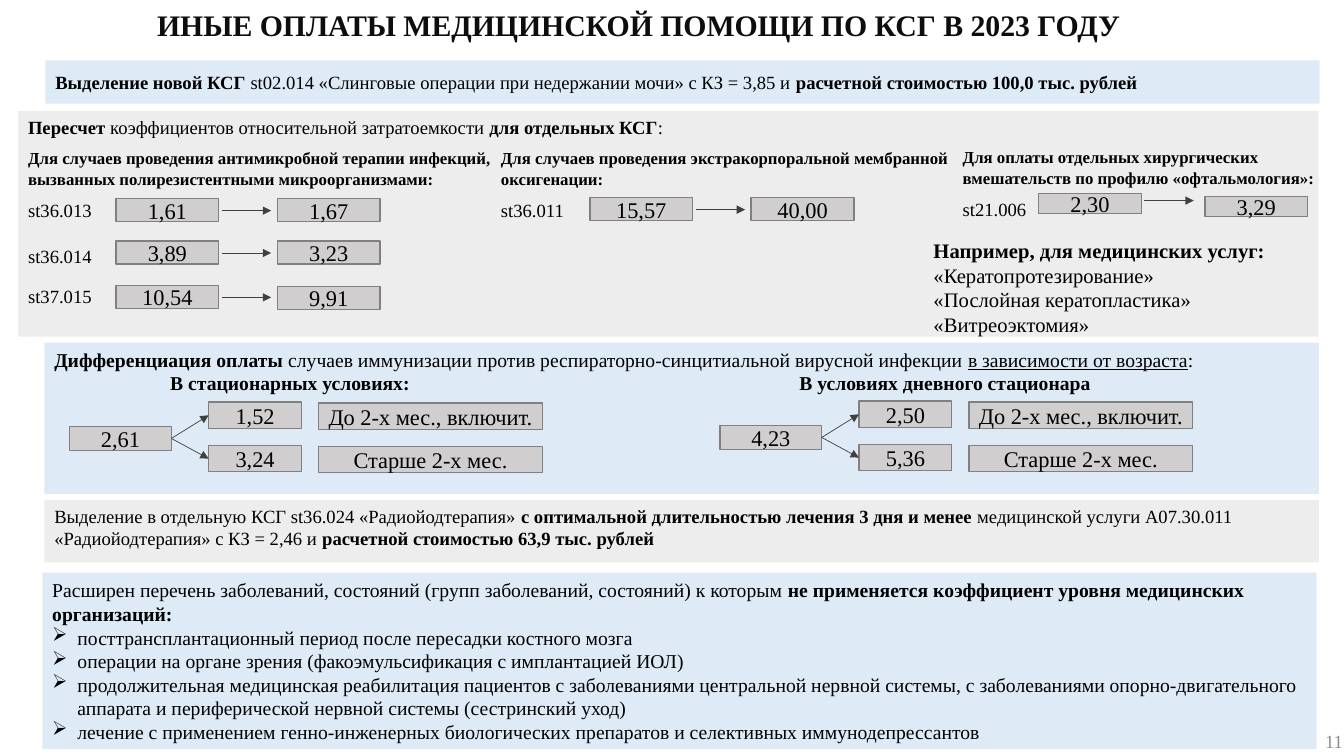
from lxml.etree import SubElement
from pptx import Presentation
from pptx.dml.color import RGBColor
from pptx.enum.shapes import MSO_CONNECTOR, MSO_SHAPE
from pptx.enum.text import MSO_ANCHOR, MSO_AUTO_SIZE, PP_ALIGN
from pptx.oxml.ns import qn
from pptx.util import Inches, Pt

FONT = "Times New Roman"
COLORS = {
    "blue": "DEEBF7", "gray": "EDEDED", "chip": "D0CECE", "edge": "808080",
    "arrow": "404040", "text": "000000", "title": "0D0D0D", "number": "8C8C8C",
}


def color(name):
    return RGBColor.from_string(COLORS[name])


def inches(*lengths):
    return [Inches(length) for length in lengths]


def add_bullet(para):
    properties = para._p.get_or_add_pPr()
    properties.set("marL", str(Inches(0.25)))
    properties.set("indent", str(-Inches(0.25)))
    SubElement(properties, qn("a:buChar")).set("char", "➢")


def add_tabs(para, stops):
    tabs = SubElement(para._p.get_or_add_pPr(), qn("a:tabLst"))
    for stop in stops:
        tab = SubElement(tabs, qn("a:tab"))
        tab.set("pos", str(Inches(stop)))
        tab.set("algn", "l")


def write(frame, spans, size, first=False, align=PP_ALIGN.LEFT, ink="text",
          before=0, bullet=False, tabs=()):
    para = frame.paragraphs[0] if first else frame.add_paragraph()
    para.alignment = align
    para.space_before = Pt(before)
    if bullet:
        add_bullet(para)
    if tabs:
        add_tabs(para, tabs)
    para.font.name = FONT
    para.font.size = Pt(size)
    para.font.color.rgb = color(ink)
    for text, style in spans:
        span = para.add_run()
        span.text = text
        span.font.bold = style == "bold"
        if style == "underline":
            span.font.underline = True


def add_rect(page, place, fill, anchor=MSO_ANCHOR.MIDDLE):
    box = page.shapes.add_shape(MSO_SHAPE.RECTANGLE, *inches(*place))
    box.shadow.inherit = False
    box.fill.solid()
    box.fill.fore_color.rgb = color(fill)
    box.line.fill.background()
    box.text_frame.word_wrap = True
    box.text_frame.vertical_anchor = anchor
    return box


def add_panel(page, place, fill, spans, size, anchor=MSO_ANCHOR.TOP):
    frame = add_rect(page, place, fill, anchor).text_frame
    write(frame, spans, size, first=True)
    return frame


def add_chip(page, left, top, width, height, text, inset=0.1):
    box = add_rect(page, (left, top, width, height), "chip")
    box.line.color.rgb = color("edge")
    box.line.width = Pt(1)
    box.text_frame.margin_left = box.text_frame.margin_right = Inches(inset)
    write(box.text_frame, [(text, "")], 16, first=True, align=PP_ALIGN.CENTER)
    return box


def add_text(page, place):
    frame = page.shapes.add_textbox(*inches(*place)).text_frame
    frame.word_wrap = True
    return frame


def add_arrow(page, start_x, start_y, end_x, end_y):
    arrow = page.shapes.add_connector(
        MSO_CONNECTOR.STRAIGHT, *inches(start_x, start_y, end_x, end_y))
    arrow.line.color.rgb = color("arrow")
    arrow.line.width = Pt(0.5)
    SubElement(arrow.line._get_or_add_ln(), qn("a:tailEnd")).set("type", "triangle")
    SubElement(arrow._element.spPr, qn("a:effectLst"))
    return arrow


def add_codes(page, place, heading, codes):
    frame = add_text(page, place)
    write(frame, [(heading, "bold")], 12, first=True)
    for code, gap in codes:
        write(frame, [(code, "")], 13.3, before=gap)


def add_change(page, left, top, old, new, height=0.23, step=1.6, drop=0,
               arrow_drop=0.12):
    add_chip(page, left, top, 1.02, height, old)
    add_chip(page, left + step, top + drop, 1.02, height, new)
    add_arrow(page, left + 1.05, top + arrow_drop, left + 1.54, top + arrow_drop)


def add_fork(page, left, top, source, branches):
    root = add_chip(page, left, top + 0.24, 1.01, 0.24, source)
    for row, (value, age, inset) in enumerate(branches):
        level = top + 0.43 * row
        branch = add_chip(page, left + 1.38, level, 0.92, 0.26, value)
        add_chip(page, left + 2.47, level + 0.01, 2.22, 0.26, age, inset)
        arrow = add_arrow(page, left + 1.01, top + 0.36, left + 1.38, level + 0.13)
        arrow.begin_connect(root, 3)
        arrow.end_connect(branch, 1)


def add_title(page, text):
    title = page.shapes.title
    title.left, title.top, title.width, title.height = inches(0, 0.02, 12.67, 0.46)
    frame = title.text_frame
    frame.auto_size = MSO_AUTO_SIZE.NONE
    frame.vertical_anchor = MSO_ANCHOR.TOP
    write(frame, [(text, "bold")], 21.3, first=True, align=PP_ALIGN.CENTER, ink="title")


def add_recalculation(page):
    add_panel(page, (0.18, 1.1, 12.9, 2.24), "gray", [
        ("Пересчет ", "bold"), ("коэффициентов относительной затратоемкости ", ""),
        ("для отдельных КСГ", "bold"), (":", "")], 13.3)
    add_codes(page, (0.18, 1.42, 5.21, 1.71),
              "Для случаев проведения антимикробной терапии инфекций, "
              "вызванных полирезистентными микроорганизмами:",
              [("st36.013", 7.7), ("st36.014", 16.5), ("st37.015", 13)])
    add_codes(page, (4.87, 1.42, 4.85, 0.84),
              "Для случаев проведения экстракорпоральной мембранной оксигенации:",
              [("st36.011", 7.7)])
    add_codes(page, (9.45, 1.41, 3.75, 0.72),
              "Для оплаты отдельных хирургических "
              "вмешательств по профилю «офтальмология»:", [("st21.006", 7.7)])
    add_change(page, 1.15, 1.97, "1,61", "1,67")
    add_change(page, 1.15, 2.39, "3,89", "3,23")
    add_change(page, 1.15, 2.83, "10,54", "9,91", drop=0.01)
    add_change(page, 5.85, 1.96, "15,57", "40,00")
    add_change(page, 10.3, 1.92, "2,30", "3,29", 0.2, 1.65, 0.03, 0.07)
    examples = add_text(page, (9.16, 2.31, 4.02, 1.09))
    write(examples, [("Например, для медицинских услуг: ", "bold"),
                     ("«Кератопротезирование»", "")], 14.7, first=True)
    for service in ("«Послойная кератопластика»", "«Витреоэктомия»"):
        write(examples, [(service, "")], 14.7)


def add_differentiation(page):
    frame = add_panel(page, (0.44, 3.4, 12.64, 1.5), "blue", [
        ("Дифференциация оплаты ", "bold"),
        ("случаев иммунизации против респираторно-синцитиальной вирусной инфекции ", ""),
        ("в зависимости от возраста", "underline"), (":", "")], 14)
    write(frame, [("\tВ стационарных условиях:\tВ условиях дневного стационара", "bold")],
          14, tabs=(1.15, 7.39))
    young, older = "До 2-х мес., включит.", "Старше 2-х мес."
    add_fork(page, 0.69, 3.99, "2,61", [("1,52", young, 0.05), ("3,24", older, 0.1)])
    add_fork(page, 7.14, 3.98, "4,23", [("2,50", young, 0.05), ("5,36", older, 0.1)])


def add_exemptions(page):
    frame = add_panel(page, (0.42, 5.68, 12.64, 1.75), "blue", [
        ("Расширен перечень заболеваний, состояний (групп заболеваний, состояний) к которым ", ""),
        ("не применяется коэффициент уровня медицинских организаций:", "bold")],
        14, MSO_ANCHOR.MIDDLE)
    for item in (
        "посттрансплантационный период после пересадки костного мозга",
        "операции на органе зрения (факоэмульсификация с имплантацией ИОЛ)",
        "продолжительная медицинская реабилитация пациентов с заболеваниями центральной "
        "нервной системы, с заболеваниями опорно-двигательного аппарата и периферической "
        "нервной системы (сестринский уход)",
        "лечение с применением генно-инженерных биологических препаратов и селективных "
        "иммунодепрессантов",
    ):
        write(frame, [(item, "")], 14, bullet=True)


def add_page_number(page, number):
    frame = add_text(page, (12.33, 7.19, 1, 0.4 - 0.1))
    frame.margin_right = Inches(0.01)
    write(frame, [(number, "")], 13.3, first=True, align=PP_ALIGN.RIGHT, ink="number")


def main():
    deck = Presentation()
    deck.slide_width, deck.slide_height = inches(13.33, 7.5)
    page = deck.slides.add_slide(deck.slide_layouts[5])
    add_title(page, "ИНЫЕ ОПЛАТЫ МЕДИЦИНСКОЙ ПОМОЩИ ПО КСГ В 2023 ГОДУ")
    add_panel(page, (0.45, 0.6, 12.64, 0.43), "blue", [
        ("Выделение новой КСГ ", "bold"),
        ("st02.014 «Слинговые операции при недержании мочи» с КЗ = 3,85 и ", ""),
        ("расчетной стоимостью 100,0 тыс. рублей", "bold")], 13.3, MSO_ANCHOR.MIDDLE)
    add_recalculation(page)
    add_differentiation(page)
    add_panel(page, (0.44, 4.96, 12.64, 0.62), "gray", [
        ("Выделение в отдельную КСГ st36.024 «Радиойодтерапия» ", ""),
        ("с оптимальной длительностью лечения 3 дня и менее ", "bold"),
        ("медицинской услуги A07.30.011 «Радиойодтерапия» с КЗ = 2,46 и ", ""),
        ("расчетной стоимостью 63,9 тыс. рублей", "bold")], 13.3)
    add_exemptions(page)
    add_page_number(page, "11")
    deck.save("out.pptx")


if __name__ == "__main__":
    main()
